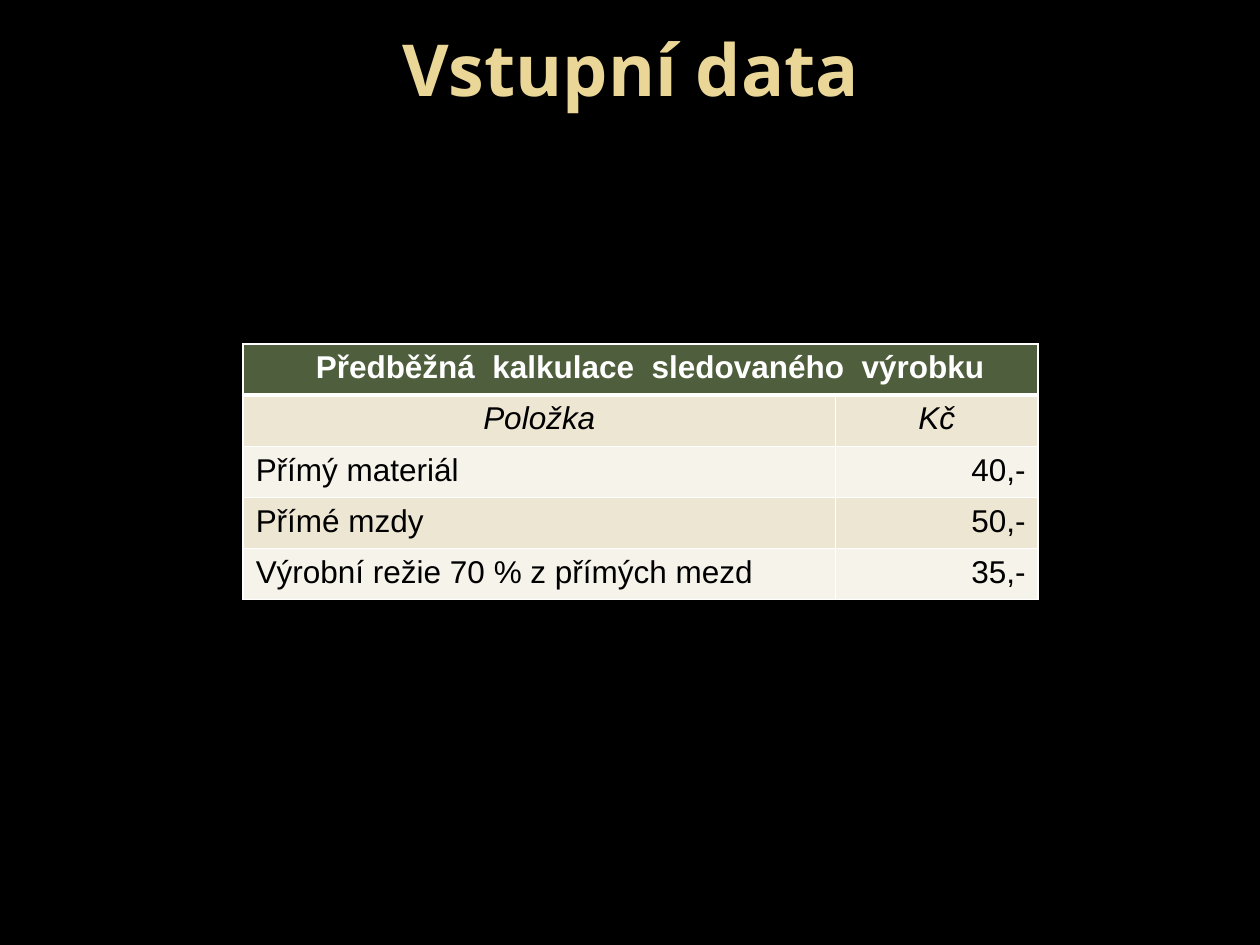
"""Build the input data slide: a title above a preliminary costing table."""
import lxml.etree
import pptx
import pptx.dml.color
import pptx.enum.text
import pptx.oxml.ns
import pptx.util

RGB = pptx.dml.color.RGBColor
ALIGN = pptx.enum.text.PP_ALIGN
ANCHOR = pptx.enum.text.MSO_ANCHOR
Inches = pptx.util.Inches
Pt = pptx.util.Pt

BLACK = RGB(0x00, 0x00, 0x00)
WHITE = RGB(0xFF, 0xFF, 0xFF)
GOLD = RGB(0xEA, 0xD6, 0x96)
GREEN = RGB(0x4F, 0x5E, 0x3C)
SAND = RGB(0xED, 0xE6, 0xD3)
CREAM = RGB(0xF6, 0xF3, 0xEA)

TITLE = "Vstupní data"
COSTING = [
    ("Předběžná  kalkulace  sledovaného  výrobku", ""),
    ("Položka", "Kč"),
    ("Přímý materiál", "40,-"),
    ("Přímé mzdy", "50,-"),
    ("Výrobní režie 70 % z přímých mezd", "35,-"),
]
COLUMNS = (4.7, 1.61)
TITLE_BOX = (0.51, 0.13, 9, 2.28)
TABLE_BOX = (1.93, 2.73, sum(COLUMNS), 2.03)

TITLE_FONT = {"name": "Open Sans", "size": Pt(41), "bold": True}
BODY_FONT = {"name": "Arial", "size": Pt(18), "bold": False, "italic": False}
HEADER_FONT = {**BODY_FONT, "bold": True}
LABEL_FONT = {**BODY_FONT, "italic": True}


def write(para, text, font, color, align):
    """Put one formatted run into a paragraph."""
    span = para.add_run()
    span.text = text
    for name, value in font.items():
        setattr(span.font, name, value)
    span.font.color.rgb = color
    para.alignment = align


def draw_borders(cell, widths):
    """Give a cell solid white borders, ahead of its fill."""
    properties = cell._tc.get_or_add_tcPr()
    qn = pptx.oxml.ns.qn
    for place, (side, width) in enumerate(widths.items()):
        line = lxml.etree.Element(qn(f"a:ln{side}"), w=str(Pt(width)))
        fill = lxml.etree.SubElement(line, qn("a:solidFill"))
        lxml.etree.SubElement(fill, qn("a:srgbClr"), val=str(WHITE))
        properties.insert(place, line)


def add_title(page):
    """Place and format the title placeholder."""
    title = page.shapes.title
    title.left, title.top, title.width, title.height = map(Inches, TITLE_BOX)
    frame = title.text_frame
    settings = {
        "word_wrap": True,
        "auto_size": pptx.enum.text.MSO_AUTO_SIZE.NONE,
        "vertical_anchor": ANCHOR.TOP,
        "margin_top": Inches(0.07),
    }
    for name, value in settings.items():
        setattr(frame, name, value)
    write(frame.paragraphs[0], TITLE, TITLE_FONT, GOLD, ALIGN.CENTER)


def add_costing(page):
    """Add the costing table with a merged header and banded rows."""
    size = len(COSTING), len(COLUMNS)
    table = page.shapes.add_table(*size, *map(Inches, TABLE_BOX)).table
    for column, width in zip(table.columns, COLUMNS):
        column.width = Inches(width)
    table.cell(0, 0).merge(table.cell(0, 1))
    for row, texts in enumerate(COSTING):
        for col, text in enumerate(texts):
            cell = table.cell(row, col)
            cell.fill.solid()
            cell.fill.fore_color.rgb = GREEN if row == 0 else (CREAM, SAND)[row % 2]
            draw_borders(cell, {"L": 1, "R": 1, "T": 3 if row == 1 else 1, "B": 3 if row == 0 else 1})
            if not text:
                continue
            font = (HEADER_FONT, LABEL_FONT)[row] if row < 2 else BODY_FONT
            align = ALIGN.CENTER if row < 2 else (ALIGN.LEFT, ALIGN.RIGHT)[col]
            para = cell.text_frame.paragraphs[0]
            write(para, text, font, WHITE if row == 0 else BLACK, align)
            if row == 0:
                para._p.get_or_add_pPr().set("marL", str(Inches(0.15)))


def main():
    """Create and save the deck."""
    deck = pptx.Presentation()
    deck.slide_width, deck.slide_height = Inches(10), Inches(7.5)
    page = deck.slides.add_slide(deck.slide_layouts[5])
    page.background.fill.solid()
    page.background.fill.fore_color.rgb = BLACK
    add_title(page)
    add_costing(page)
    deck.save("out.pptx")


if __name__ == "__main__":
    main()
